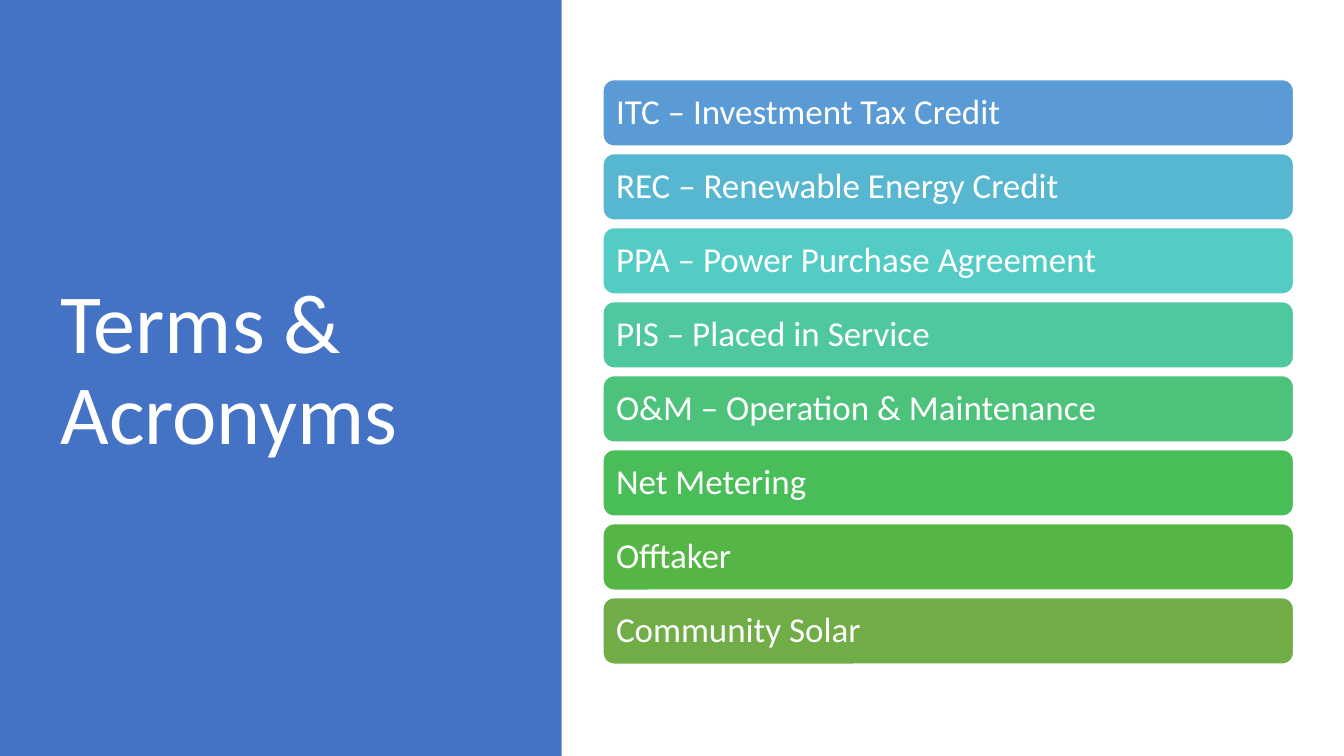
import pptx
import pptx.dml.color
import pptx.enum.shapes
import pptx.enum.text
import pptx.util

Inches = pptx.util.Inches
Pt = pptx.util.Pt
Shapes = pptx.enum.shapes.MSO_SHAPE

WHITE = "FFFFFF"
PANEL_BLUE = "4472C4"
TERMS = [
    ("ITC – Investment Tax Credit", "5B9BD5"),
    ("REC – Renewable Energy Credit", "57B7D1"),
    ("PPA – Power Purchase Agreement", "53CCC5"),
    ("PIS – Placed in Service", "4FC7A0"),
    ("O&M – Operation & Maintenance", "4CC27B"),
    ("Net Metering", "48BD58"),
    ("Offtaker", "55B646"),
    ("Community Solar", "70AD47"),
]


def color(value):
    return pptx.dml.color.RGBColor.from_string(value)


def add_box(page, kind, left, top, width, height, fill):
    box = page.shapes.add_shape(
        kind, Inches(left), Inches(top), Inches(width), Inches(height)
    )
    box.shadow.inherit = False
    box.fill.solid()
    box.fill.fore_color.rgb = color(fill)
    return box


def write_text(box, text, size):
    frame = box.text_frame
    frame.word_wrap = True
    frame.auto_size = pptx.enum.text.MSO_AUTO_SIZE.NONE
    frame.vertical_anchor = pptx.enum.text.MSO_ANCHOR.MIDDLE
    para = frame.paragraphs[0]
    para.alignment = pptx.enum.text.PP_ALIGN.LEFT
    para.line_spacing = 0.9
    span = para.add_run()
    span.text = text
    span.font.name = "Calibri"
    span.font.size = Pt(size)
    span.font.color.rgb = color(WHITE)


def add_title_panel(page, left, top, width, height):
    panel = add_box(page, Shapes.RECTANGLE, left, top, width, height, PANEL_BLUE)
    panel.line.fill.background()
    title = page.shapes.title
    title.left, title.top = Inches(left + 0.5), Inches(top + 0.68)
    title.width, title.height = Inches(width - 1.41), Inches(height - 1.48)
    write_text(title, "Terms & Acronyms", 60)
    title.element.addprevious(panel.element)


def add_term_list(page, left, top, width, height):
    bar_height = 0.66
    pitch = (height - bar_height) / (len(TERMS) - 1)
    for index, (term, fill) in enumerate(TERMS):
        bar = add_box(
            page, Shapes.ROUNDED_RECTANGLE,
            left, top + index * pitch, width, bar_height, fill,
        )
        bar.line.color.rgb = color(WHITE)
        bar.line.width = Pt(1)
        frame = bar.text_frame
        frame.margin_left = frame.margin_right = Inches(0.1)
        frame.margin_top = frame.margin_bottom = Inches(0.1)
        write_text(bar, term, 25)


def main():
    deck = pptx.Presentation()
    deck.slide_width = Inches(13.33)
    deck.slide_height = Inches(7.5)
    page = deck.slides.add_slide(deck.slide_layouts.get_by_name("Title Only"))
    add_title_panel(page, 0, 0, 5.57, 7.5)
    add_term_list(page, 5.98, 0.79, 6.85, 5.8)
    deck.save("out.pptx")


if __name__ == "__main__":
    main()
